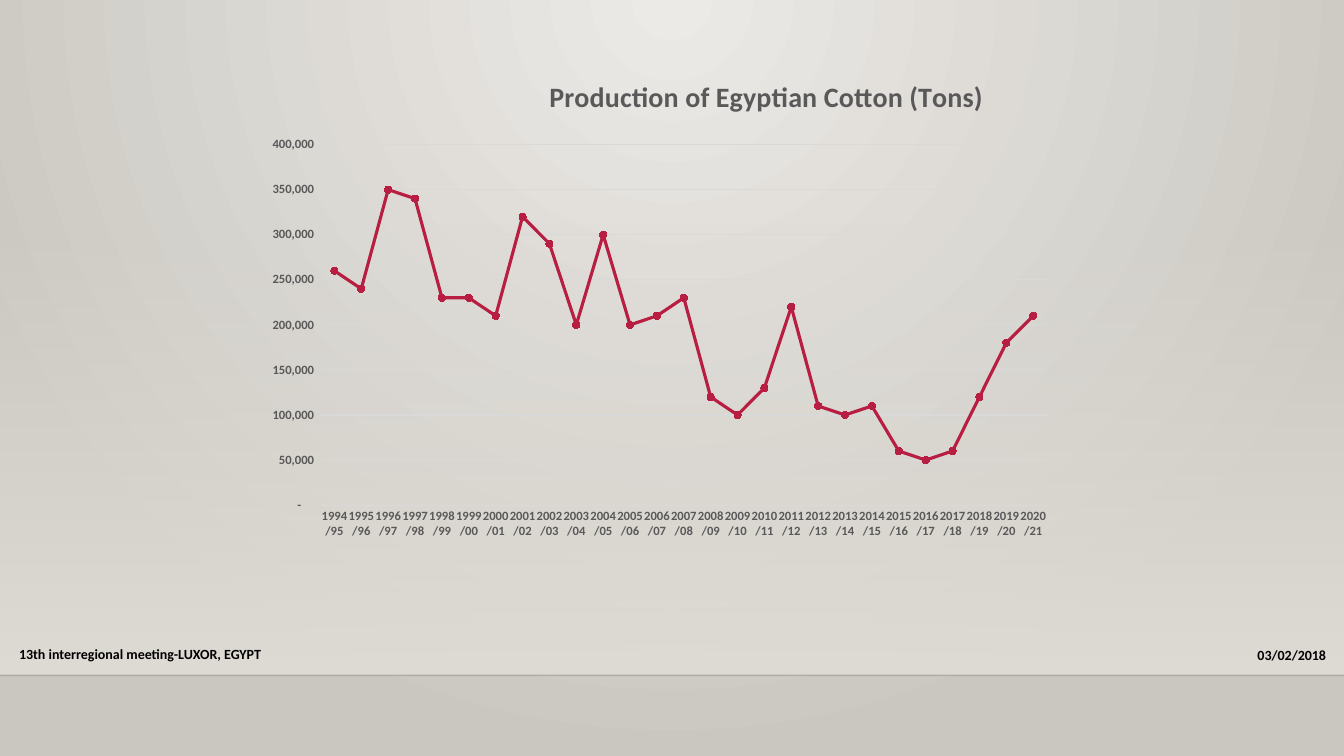
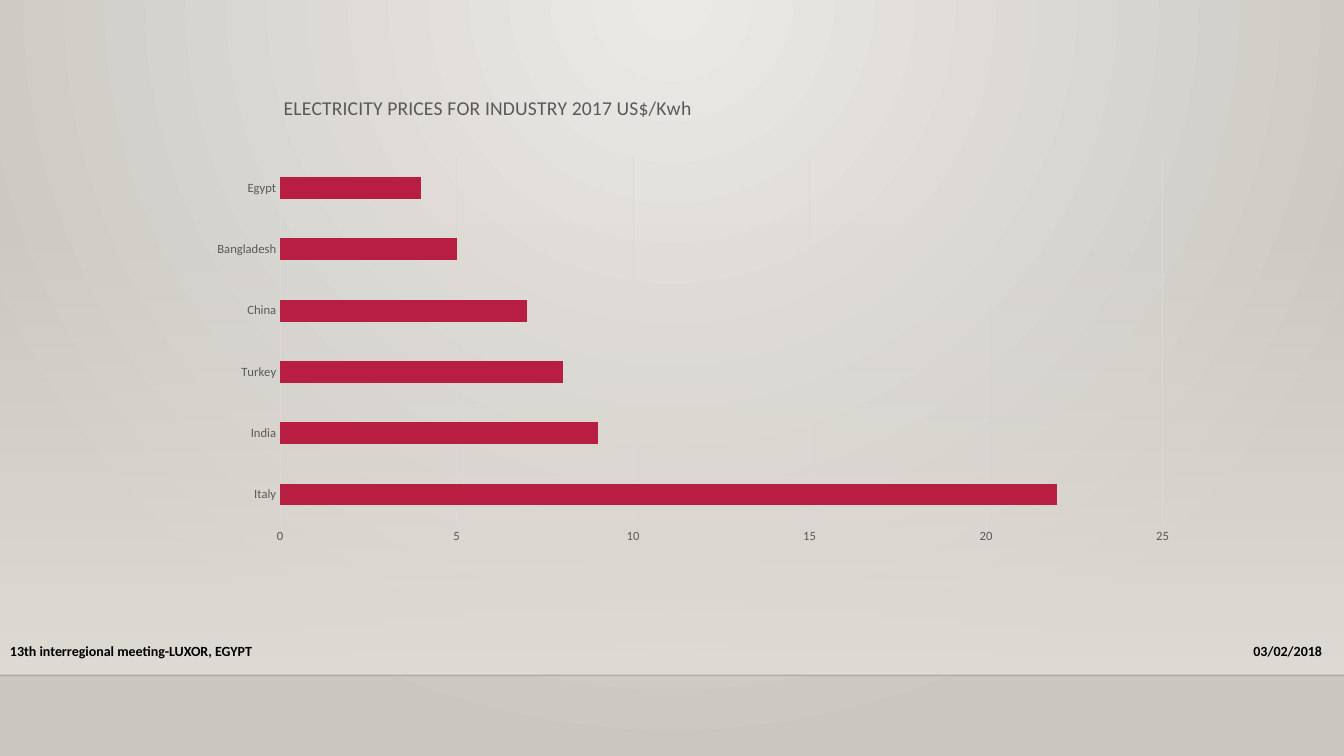
import pptx
import pptx.chart.data
import pptx.dml.color
import pptx.enum.chart
import pptx.enum.shapes
import pptx.enum.text
import pptx.oxml
import pptx.oxml.ns
import pptx.util

Inches = pptx.util.Inches
Pt = pptx.util.Pt
RGBColor = pptx.dml.color.RGBColor
ChartType = pptx.enum.chart.XL_CHART_TYPE
Align = pptx.enum.text.PP_ALIGN
qn = pptx.oxml.ns.qn

FONT = "Calibri"
BLACK = RGBColor(0x00, 0x00, 0x00)
RULE = RGBColor(0x00, 0x00, 0x01)
GRAY = RGBColor(0x59, 0x59, 0x59)
GRID = RGBColor(0xD9, 0xD9, 0xD9)
CRIMSON = RGBColor(0xB7, 0x1E, 0x42)
GLOW = RGBColor(0xEC, 0xEA, 0xE7)
STONE = RGBColor(0xCA, 0xC7, 0xC1)
SAND = RGBColor(0xDF, 0xDB, 0xD5)

WIDTH = 13.33
BAND_TOP = 2.21
BAND_BOTTOM = 6.7
MEETING = "13th interregional meeting-LUXOR, EGYPT"
DATE = "03/02/2018"
TONS_FORMAT = r'_(* #,##0_);_(* \(#,##0\);_(* "-"??_);_(@_)'

YEARS = [f"{year}/{(year + 1) % 100:02d}" for year in range(1994, 2021)]
TONS = [
    260000, 240000, 350000, 340000, 230000, 230000, 210000, 320000, 290000,
    200000, 300000, 200000, 210000, 230000, 120000, 100000, 130000, 220000,
    110000, 100000, 110000, 60000, 50000, 60000, 120000, 180000, 210000,
]
PRICES = {"Italy": 22, "India": 9, "Turkey": 8, "China": 7, "Bangladesh": 5, "Egypt": 4}


def parse_xml(tag, content):
    return pptx.oxml.parse_xml(
        f"<{tag} {pptx.oxml.ns.nsdecls('a', 'c')}>{content}</{tag}>"
    )


def set_gradient(properties, stops, direction):
    solid = properties.find(qn("a:solidFill"))
    stop_xml = "".join(
        f'<a:gs pos="{position * 1000}"><a:srgbClr val="{color}">'
        f'<a:alpha val="{alpha * 1000}"/></a:srgbClr></a:gs>'
        for position, color, alpha in stops
    )
    gradient = parse_xml("a:gradFill", f"<a:gsLst>{stop_xml}</a:gsLst>{direction}")
    properties.replace(solid, gradient)


def style_master(presentation, slide):
    master = presentation.slide_master
    master.background.fill.solid()
    set_gradient(
        master.element.xpath("./p:cSld/p:bg/p:bgPr")[0],
        [(0, GLOW, 100), (100, STONE, 100)],
        '<a:path path="circle"><a:fillToRect l="43000" t="0" r="43000" b="100000"/></a:path>',
    )

    band = slide.shapes.add_shape(
        pptx.enum.shapes.MSO_SHAPE.RECTANGLE,
        Inches(0), Inches(BAND_TOP), Inches(WIDTH), Inches(BAND_BOTTOM - BAND_TOP),
    )
    band.shadow.inherit = False
    band.line.fill.background()
    band.fill.solid()
    set_gradient(
        band.element.spPr, [(0, SAND, 0), (100, SAND, 100)], '<a:lin ang="5400000" scaled="0"/>'
    )

    rule = slide.shapes.add_connector(
        pptx.enum.shapes.MSO_CONNECTOR.STRAIGHT,
        Inches(0), Inches(BAND_BOTTOM), Inches(WIDTH), Inches(BAND_BOTTOM),
    )
    rule.line.color.rgb = RULE
    rule.line.width = Pt(1)
    rule_color = rule.element.xpath("./p:spPr/a:ln/a:solidFill/a:srgbClr")[0]
    rule_color.append(parse_xml("a:alpha", ""))
    rule_color[0].set("val", "20000")
    rule.element.spPr.append(parse_xml("a:effectLst", ""))

    for index, shape in enumerate((band, rule)):
        shape.element.xpath(".//p:cNvPr")[0].set("id", str(20 + index))
        master.shapes.element.insert(2 + index, shape.element)


def set_font(font, size, color, bold):
    font.name = FONT
    font.size = Pt(size)
    font.color.rgb = color
    font.bold = bold


def set_layout(parent, index, content):
    for layout in parent.findall(qn("c:layout")):
        parent.remove(layout)
    parent.insert(index, parse_xml("c:layout", f"<c:manualLayout>{content}</c:manualLayout>"))


def values_xml(**values):
    return "".join(f'<c:{name} val="{value}"/>' for name, value in values.items())


def set_line(line, color, width):
    line.color.rgb = color
    line.width = Pt(width)


def style_axes(chart, maximum, step, bold):
    for axis in (chart.category_axis, chart.value_axis):
        axis.major_tick_mark = pptx.enum.chart.XL_TICK_MARK.NONE
        axis.minor_tick_mark = pptx.enum.chart.XL_TICK_MARK.NONE
        set_font(axis.tick_labels.font, 9, GRAY, bold)
    chart.category_axis.has_major_gridlines = False
    set_line(chart.category_axis.format.line, GRID, 0.75)
    value_axis = chart.value_axis
    value_axis.minimum_scale = 0
    value_axis.maximum_scale = maximum
    value_axis.major_unit = step
    value_axis.has_major_gridlines = True
    set_line(value_axis.major_gridlines.format.line, GRID, 0.75)
    value_axis.format.line.fill.background()


def add_chart(slide, kind, box, categories, values, plot_box, bold):
    data = pptx.chart.data.CategoryChartData()
    data.categories = categories
    data.add_series("Series 1", values)
    chart = slide.shapes.add_chart(kind, *[Inches(length) for length in box], data).chart
    chart.has_legend = False
    set_font(chart.font, 10, BLACK, bold)
    chart.plots[0].vary_by_categories = False
    x, y, width, height = plot_box
    plot_area = chart.element.xpath("./c:chart/c:plotArea")[0]
    set_layout(
        plot_area, 0,
        values_xml(layoutTarget="inner", xMode="edge", yMode="edge", x=x, y=y, w=width, h=height),
    )
    return chart


def add_chart_title(chart, text, size, bold, x, y):
    chart.has_title = True
    title = chart.chart_title
    title.text_frame.text = text
    set_font(title.text_frame.paragraphs[0].runs[0].font, size, GRAY, bold)
    title.include_in_layout = False
    set_layout(title.element, 1, values_xml(xMode="edge", yMode="edge", x=x, y=y))


def add_footer_text(slide, text, left, top, width, alignment):
    box = slide.shapes.add_textbox(Inches(left), Inches(top), Inches(width), Inches(0.34))
    frame = box.text_frame
    frame.word_wrap = True
    frame.vertical_anchor = pptx.enum.text.MSO_ANCHOR.MIDDLE
    frame.text = text
    paragraph = frame.paragraphs[0]
    paragraph.alignment = alignment
    set_font(paragraph.runs[0].font, 10, BLACK, True)


def add_footer(slide, meeting_left, meeting_top, date_left, date_top):
    add_footer_text(slide, DATE, date_left, date_top, 3.83, Align.RIGHT)
    add_footer_text(slide, MEETING, meeting_left, meeting_top, 6.49, Align.LEFT)


def fill_production_slide(slide):
    chart = add_chart(
        slide, ChartType.LINE_MARKERS, (2.63, 0.54, 7.91, 5.59),
        YEARS, TONS, (0.07, 0.16, 0.91, 0.64), True,
    )
    add_chart_title(chart, "Production of Egyptian Cotton (Tons)", 20, True, 0.35, 0.03)
    style_axes(chart, 400000, 50000, True)
    labels = chart.value_axis.tick_labels
    labels.number_format = TONS_FORMAT
    labels.number_format_is_linked = False
    series = chart.plots[0].series[0]
    series.smooth = False
    set_line(series.format.line, CRIMSON, 2.25)
    marker = series.marker
    marker.style = pptx.enum.chart.XL_MARKER_STYLE.CIRCLE
    marker.size = 5
    marker.format.fill.solid()
    marker.format.fill.fore_color.rgb = CRIMSON
    set_line(marker.format.line, CRIMSON, 0.75)
    add_footer(slide, 0.09, 6.32, 9.42, 6.33)


def fill_electricity_slide(slide):
    chart = add_chart(
        slide, ChartType.BAR_CLUSTERED, (0.7, 0.7, 10.94, 5.07),
        list(PRICES), list(PRICES.values()), (0.19, 0.17, 0.8, 0.72), False,
    )
    add_chart_title(chart, "ELECTRICITY PRICES FOR INDUSTRY 2017 US$/Kwh", 14, False, 0.19, 0.04)
    style_axes(chart, 25, 5, False)
    chart.plots[0].gap_width = 182
    fill = chart.plots[0].series[0].format.fill
    fill.solid()
    fill.fore_color.rgb = CRIMSON
    add_footer(slide, 0, 6.29, 9.38, 6.29)


def main():
    presentation = pptx.Presentation()
    presentation.slide_width = Inches(WIDTH)
    presentation.slide_height = Inches(7.5)
    blank = presentation.slide_layouts[6]
    production, electricity = [presentation.slides.add_slide(blank) for _ in range(2)]
    style_master(presentation, production)
    fill_production_slide(production)
    fill_electricity_slide(electricity)
    presentation.save("out.pptx")


if __name__ == "__main__":
    main()
